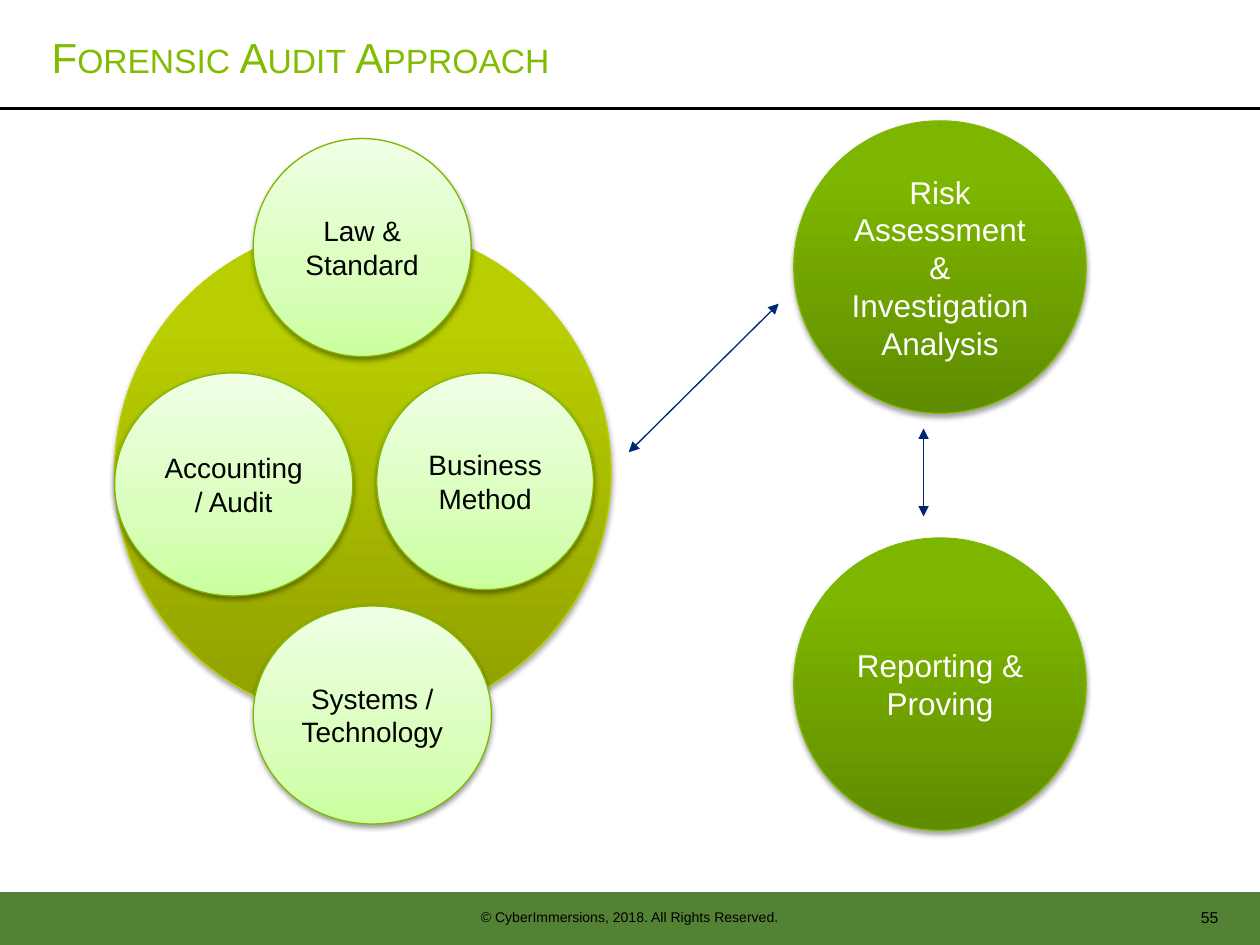
from lxml import etree
from pptx import Presentation
from pptx.dml.color import RGBColor
from pptx.enum.shapes import MSO_CONNECTOR, MSO_SHAPE
from pptx.enum.text import MSO_ANCHOR, PP_ALIGN
from pptx.oxml.ns import qn
from pptx.util import Inches, Pt

OVAL, RECTANGLE = MSO_SHAPE.OVAL, MSO_SHAPE.RECTANGLE
STRAIGHT = MSO_CONNECTOR.STRAIGHT
LEFT, CENTER, RIGHT = PP_ALIGN.LEFT, PP_ALIGN.CENTER, PP_ALIGN.RIGHT
TOP, MIDDLE = MSO_ANCHOR.TOP, MSO_ANCHOR.MIDDLE

FONT = "Arial"
BLACK = RGBColor(0x00, 0x00, 0x00)
WHITE = RGBColor(0xFF, 0xFF, 0xFF)
TITLE_GREEN = RGBColor(0x81, 0xBC, 0x00)
FOOTER_GREEN = RGBColor(0x54, 0x82, 0x35)
OUTLINE_GREEN = RGBColor(0x7E, 0xB8, 0x00)
OUTLINE_LIME = RGBColor(0xBB, 0xD0, 0x00)
ARROW_BLUE = RGBColor(0x00, 0x26, 0x73)

# Gradient stops (percent, colour), running from bottom to top
LIME = [(0, RGBColor(0x8F, 0x9F, 0x00)), (80, RGBColor(0xB9, 0xCE, 0x00)),
        (100, RGBColor(0xBA, 0xCF, 0x00))]
PALE = [(0, RGBColor(0xCA, 0xFF, 0x9E)), (35, RGBColor(0xD9, 0xFF, 0xBB)),
        (100, RGBColor(0xF0, 0xFF, 0xE5))]
GREEN = [(0, RGBColor(0x60, 0x8C, 0x00)), (80, RGBColor(0x7D, 0xB6, 0x00)),
         (100, RGBColor(0x7E, 0xB7, 0x00))]


def add_child(parent, tag, **attributes):
    child = etree.SubElement(parent, qn(tag))
    for name, value in attributes.items():
        child.set(name, str(value))
    return child


def write(frame, text, size, color, align=CENTER, anchor=MIDDLE, margin=None):
    """Put one formatted paragraph in a text frame."""
    frame.word_wrap = True
    frame.vertical_anchor = anchor
    if margin is not None:
        frame.margin_left = frame.margin_right = Inches(margin)
        frame.margin_top = frame.margin_bottom = Inches(margin)
    paragraph = frame.paragraphs[0]
    paragraph.alignment = align
    run = paragraph.add_run()
    run.text = text
    run.font.name, run.font.size = FONT, Pt(size)
    run.font.color.rgb = color
    return paragraph


def place(shape, *box):
    shape.left, shape.top, shape.width, shape.height = map(Inches, box)


def add_title(slide, text):
    title = slide.shapes.title
    place(title, 0.41, 0.22, 7.94, 0.51)
    paragraph = write(title.text_frame, text, 24, TITLE_GREEN, align=LEFT, margin=0)
    paragraph.line_spacing = 0.9
    paragraph.runs[0].font._element.set("cap", "small")


def add_label(slide, box, text, size, **layout):
    label = slide.shapes.add_textbox(*map(Inches, box))
    write(label.text_frame, text, size, BLACK, **layout)


def add_circle(slide, box, stops, outline, shadow_opacity=35, shadow_distance=1.8):
    circle = slide.shapes.add_shape(OVAL, *map(Inches, box))
    circle.fill.gradient()
    circle.fill.gradient_angle = 90
    stop_list = circle._element.spPr.find(".//" + qn("a:gsLst"))
    for old_stop in list(stop_list):
        stop_list.remove(old_stop)
    for position, color in stops:
        stop = add_child(stop_list, "a:gs", pos=position * 1000)
        add_child(stop, "a:srgbClr", val=color)
    circle.line.color.rgb = outline
    circle.line.width = Pt(0.75)
    # Soft shadow straight below
    circle.shadow.inherit = False
    effects = circle._element.spPr.find(qn("a:effectLst"))
    shadow = add_child(effects, "a:outerShdw", blurRad=Pt(3.1),
                       dist=Pt(shadow_distance), dir=90 * 60000, rotWithShape=0)
    shadow_color = add_child(shadow, "a:srgbClr", val=BLACK)
    add_child(shadow_color, "a:alpha", val=shadow_opacity * 1000)
    return circle


def add_discipline(slide, text, box):
    circle = add_circle(slide, box, PALE, OUTLINE_GREEN,
                        shadow_opacity=38, shadow_distance=1.6)
    write(circle.text_frame, text, 16, BLACK)


def add_stage(slide, text, top):
    circle = add_circle(slide, (6.3, top, 2.32, 2.32), GREEN, OUTLINE_GREEN)
    write(circle.text_frame, text, 18, WHITE)


def add_line(slide, ends, color, width, arrows=False):
    line = slide.shapes.add_connector(STRAIGHT, *map(Inches, ends))
    line.line.color.rgb = color
    line.line.width = Pt(width)
    if arrows:
        for tag in ("a:headEnd", "a:tailEnd"):
            add_child(line.line._get_or_add_ln(), tag, type="triangle")
    add_child(line._element.spPr, "a:effectLst")


def add_footer(slide):
    band = slide.shapes.add_shape(RECTANGLE, *map(Inches, (0, 7.08, 10, 0.42)))
    band.fill.solid()
    band.fill.fore_color.rgb = FOOTER_GREEN
    band.line.fill.background()
    band.shadow.inherit = False
    add_label(slide, (3.62, 7.16, 2.76, 0.24),
              "© CyberImmersions, 2018. All Rights Reserved.", 8, anchor=TOP)
    add_label(slide, (8.8, 7.14, 0.87, 0.28), "55", 9, align=RIGHT, margin=0)


def main():
    prs = Presentation()
    prs.slide_width, prs.slide_height = Inches(10), Inches(7.5)
    slide = prs.slides.add_slide(prs.slide_layouts[5])

    # Slide frame
    add_footer(slide)
    add_line(slide, (0, 0.86, 10, 0.86), BLACK, 1.5)
    add_title(slide, "Forensic Audit Approach")

    # Disciplines around the large circle
    add_circle(slide, (0.91, 1.78, 3.94, 3.94), LIME, OUTLINE_LIME)
    for text, box in (
        ("Law & Standard", (2.01, 1.1, 1.73, 1.73)),
        ("Accounting / Audit", (0.91, 2.96, 1.89, 1.77)),
        ("Business Method", (2.99, 2.96, 1.72, 1.72)),
        ("Systems / Technology", (2.01, 4.81, 1.89, 1.73)),
    ):
        add_discipline(slide, text, box)

    # Audit stages and the links between them
    add_stage(slide, "Risk Assessment & Investigation Analysis", 0.96)
    add_stage(slide, "Reporting & Proving", 4.27)
    for ends in ((4.99, 3.59, 6.18, 2.41), (7.33, 3.4, 7.33, 4.1)):
        add_line(slide, ends, ARROW_BLUE, 0.75, arrows=True)

    prs.save("out.pptx")


if __name__ == "__main__":
    main()
